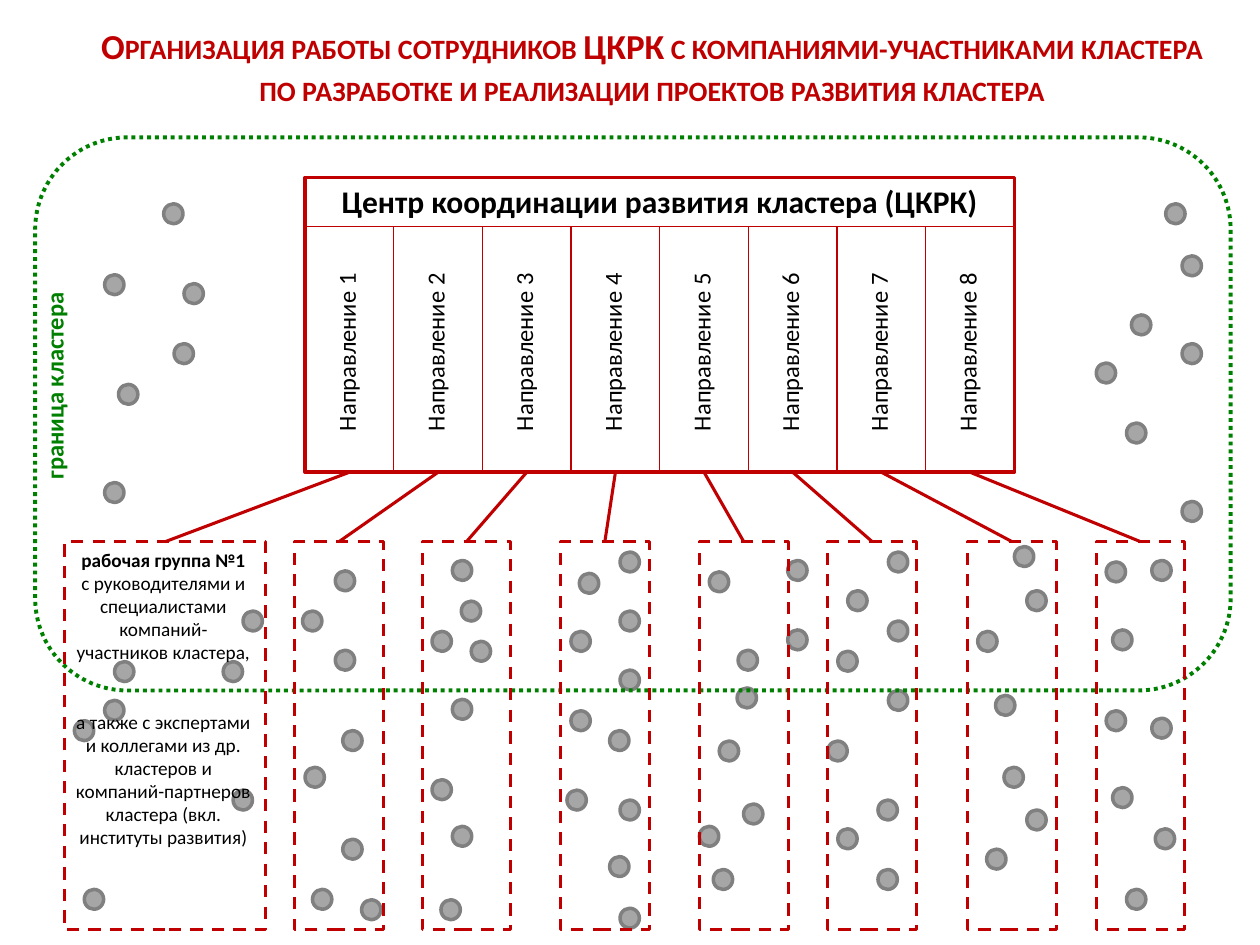
from lxml import etree
from pptx import Presentation
from pptx import util as u
from pptx.dml import color
from pptx.enum import dml, shapes, text
from pptx.oxml import ns

COLORS = {"red": "C00000", "green": "008000", "black": "000000", "dot": "A6A6A6", "rim": "808080"}
FONT = "Calibri"
CENTER = text.PP_ALIGN.CENTER
LEFT = text.PP_ALIGN.LEFT
DEFAULT_INSETS = (0.25, 0.13)
GROUP_INSETS = (0.2, 0.13)
TIGHT_INSETS = (0.18, 0.08)

CENTER_LEFT, CENTER_TOP, CENTER_WIDTH, CENTER_HEIGHT = 6.15, 3.58, 14.3, 5.94
CENTER_BOTTOM = CENTER_TOP + CENTER_HEIGHT
DIRECTIONS = 8
COLUMN_TOP = 4.57
COLUMN_WIDTH = CENTER_WIDTH / DIRECTIONS
GROUP_TOP, GROUP_HEIGHT = 10.92, 7.82
GROUPS = [(1.3, 4.06)] + [(left, COLUMN_WIDTH) for left in (5.94, 8.51, 11.3, 14.1, 16.69, 19.51, 22.1)]

COMPANIES = [
    (3.3, 4.11), (2.11, 5.54), (3.71, 5.72), (3.51, 6.93), (2.39, 7.75), (2.11, 9.73),
    (23.5, 4.11), (23.83, 5.16), (22.81, 6.35), (23.83, 6.93), (22.1, 7.32), (22.71, 8.53), (23.83, 10.11),
    (4.9, 12.32), (2.31, 13.34), (4.5, 13.34), (2.11, 14.12), (1.5, 14.53), (4.7, 15.93), (1.7, 17.93),
    (6.76, 11.51), (6.1, 12.32), (6.76, 13.11), (6.91, 14.73), (6.15, 15.47), (6.91, 16.92), (6.3, 17.93),
    (7.29, 18.14),
    (9.12, 11.3), (9.3, 12.12), (8.71, 12.73), (9.5, 12.93), (9.12, 14.1), (8.71, 15.72), (9.12, 16.66),
    (8.89, 18.14),
    (12.5, 11.13), (11.68, 11.56), (12.5, 12.32), (11.51, 12.73), (12.5, 13.51), (11.51, 14.33),
    (12.29, 14.73), (11.43, 15.93), (12.5, 16.13), (12.29, 17.27), (12.5, 18.31),
    (14.3, 11.53), (15.88, 11.3), (15.88, 12.7), (14.88, 13.11), (14.86, 13.87), (14.5, 14.94),
    (14.99, 16.21), (14.1, 16.66), (14.38, 17.53),
    (17.91, 11.13), (17.09, 11.91), (17.91, 12.52), (16.89, 13.13), (17.91, 13.92), (16.69, 14.94),
    (17.7, 16.13), (16.89, 16.71), (17.7, 17.53),
    (20.45, 11.02), (20.7, 11.91), (19.71, 12.73), (20.07, 14.02), (20.24, 15.47), (20.7, 16.33),
    (19.89, 17.12),
    (22.3, 11.33), (23.22, 11.3), (22.43, 12.7), (22.3, 14.33), (23.22, 14.48), (22.43, 15.88),
    (23.29, 16.71), (22.71, 17.93),
]


def rgb(name):
    """Return a named colour."""
    return color.RGBColor.from_string(COLORS[name])


def add_outline(slide, kind, box, line, width, dash=None, fill=None):
    """Add a preset shape with a coloured outline."""
    shape = slide.shapes.add_shape(kind, *map(u.Cm, box))
    shape.shadow.inherit = False
    if fill:
        shape.fill.solid()
        shape.fill.fore_color.rgb = rgb(fill)
    else:
        shape.fill.background()
    shape.line.color.rgb = rgb(line)
    shape.line.width = u.Pt(width)
    if dash:
        shape.line.dash_style = dash
    return shape


def add_line(slide, start, end, width):
    """Add a straight red line without a shadow."""
    line = slide.shapes.add_connector(shapes.MSO_CONNECTOR.STRAIGHT, *map(u.Cm, start + end))
    line.line.color.rgb = rgb("red")
    line.line.width = u.Pt(width)
    etree.SubElement(line._element.spPr, ns.qn("a:effectLst"))


def set_frame(shape, insets, anchor=text.MSO_ANCHOR.TOP, upward=False):
    """Set wrapping, insets, anchor and direction of a text frame."""
    frame = shape.text_frame
    frame.word_wrap = True
    frame.vertical_anchor = anchor
    frame.margin_left = frame.margin_right = u.Cm(insets[0])
    frame.margin_top = frame.margin_bottom = u.Cm(insets[1])
    if upward:
        frame._txBody.bodyPr.set("vert", "vert270")
    return frame


def add_run(paragraph, words, size, ink="black", bold=False):
    """Add one formatted run to a paragraph."""
    run = paragraph.add_run()
    run.text = words
    run.font.name = FONT
    run.font.size = u.Pt(size)
    run.font.bold = bold
    run.font.color.rgb = rgb(ink)
    return run


def add_text(slide, box, insets=DEFAULT_INSETS, **options):
    """Add a text box and return its frame."""
    return set_frame(slide.shapes.add_textbox(*map(u.Cm, box)), insets, **options)


def add_title(slide):
    """Add the two-line heading in small capitals."""
    frame = add_text(slide, (1.27, 0.77, 23.75, 1.14), anchor=text.MSO_ANCHOR.MIDDLE)
    paragraph = frame.paragraphs[0]
    paragraph.alignment = CENTER
    lines = ("Организация работы сотрудников ЦКРК с компаниями-участниками кластера",
             "по разработке и реализации проектов развития кластера")
    for index, words in enumerate(lines):
        if index:
            paragraph.add_line_break()
        run = add_run(paragraph, words, 20, "red", True)
        run.font._element.set("cap", "small")


def add_center(slide):
    """Add the coordination centre with its columns of directions."""
    rectangle = shapes.MSO_SHAPE.RECTANGLE
    box = (CENTER_LEFT, CENTER_TOP, CENTER_WIDTH, CENTER_HEIGHT)
    frame = set_frame(add_outline(slide, rectangle, box, "red", 2), TIGHT_INSETS)
    frame.paragraphs[0].alignment = CENTER
    add_run(frame.paragraphs[0], "Центр координации развития кластера (ЦКРК)", 18, bold=True)
    add_line(slide, (CENTER_LEFT, COLUMN_TOP), (19.25, COLUMN_TOP), 0.75)
    for index in range(DIRECTIONS):
        left = CENTER_LEFT + index * COLUMN_WIDTH
        column = (left, COLUMN_TOP, COLUMN_WIDTH, CENTER_BOTTOM - COLUMN_TOP)
        add_outline(slide, rectangle, column, "red", 0.75)
        frame = add_text(slide, (left + 0.28, 5.06, 1.12, 3.76), upward=True)
        frame.paragraphs[0].alignment = LEFT
        add_run(frame.paragraphs[0], f"Направление {index + 1}", 14)


def add_group_text(slide):
    """Add the description of the first working group."""
    frame = add_text(slide, (1.3, GROUP_TOP, 3.99, 7.32), GROUP_INSETS)
    lines = (("рабочая группа №1", True, 0),
             ("с руководителями и специалистами компаний-участников кластера,", False, 0),
             ("а также с экспертами и коллегами из др. кластеров и компаний-партнеров кластера "
              "(вкл. институты развития)", False, 26.5))
    for index, (words, bold, gap) in enumerate(lines):
        paragraph = frame.add_paragraph() if index else frame.paragraphs[0]
        paragraph.alignment = CENTER
        if gap:
            paragraph.space_before = u.Pt(gap)
        add_run(paragraph, words, 11, bold=bold)


def add_boundary(slide):
    """Add the cluster boundary and its label."""
    add_outline(slide, shapes.MSO_SHAPE.ROUNDED_RECTANGLE, (0.71, 2.77, 24.1, 11.15),
                "green", 2.25, dml.MSO_LINE.ROUND_DOT)
    frame = add_text(slide, (0.61, 5.13, 0.94, 4.62), TIGHT_INSETS, upward=True)
    frame.paragraphs[0].alignment = LEFT
    add_run(frame.paragraphs[0], "граница кластера", 14, "green", True)


def add_groups(slide):
    """Add the working groups and link each one to its direction."""
    for index, (left, width) in enumerate(GROUPS):
        start = CENTER_LEFT + (index + 0.5) * COLUMN_WIDTH
        add_line(slide, (start, CENTER_BOTTOM), (left + width / 2, GROUP_TOP), 1.75)
        add_outline(slide, shapes.MSO_SHAPE.RECTANGLE, (left, GROUP_TOP, width, GROUP_HEIGHT),
                    "red", 1.75, dml.MSO_LINE.DASH)


def main():
    """Build and save the slide."""
    presentation = Presentation()
    presentation.slide_width, presentation.slide_height = u.Cm(25.4), u.Cm(19.05)
    slide = presentation.slides.add_slide(presentation.slide_layouts[6])
    add_title(slide)
    for left, top in COMPANIES:
        add_outline(slide, shapes.MSO_SHAPE.OVAL, (left, top, 0.39, 0.4), "rim", 2, fill="dot")
    add_center(slide)
    add_group_text(slide)
    add_boundary(slide)
    add_groups(slide)
    presentation.save("out.pptx")


if __name__ == "__main__":
    main()
